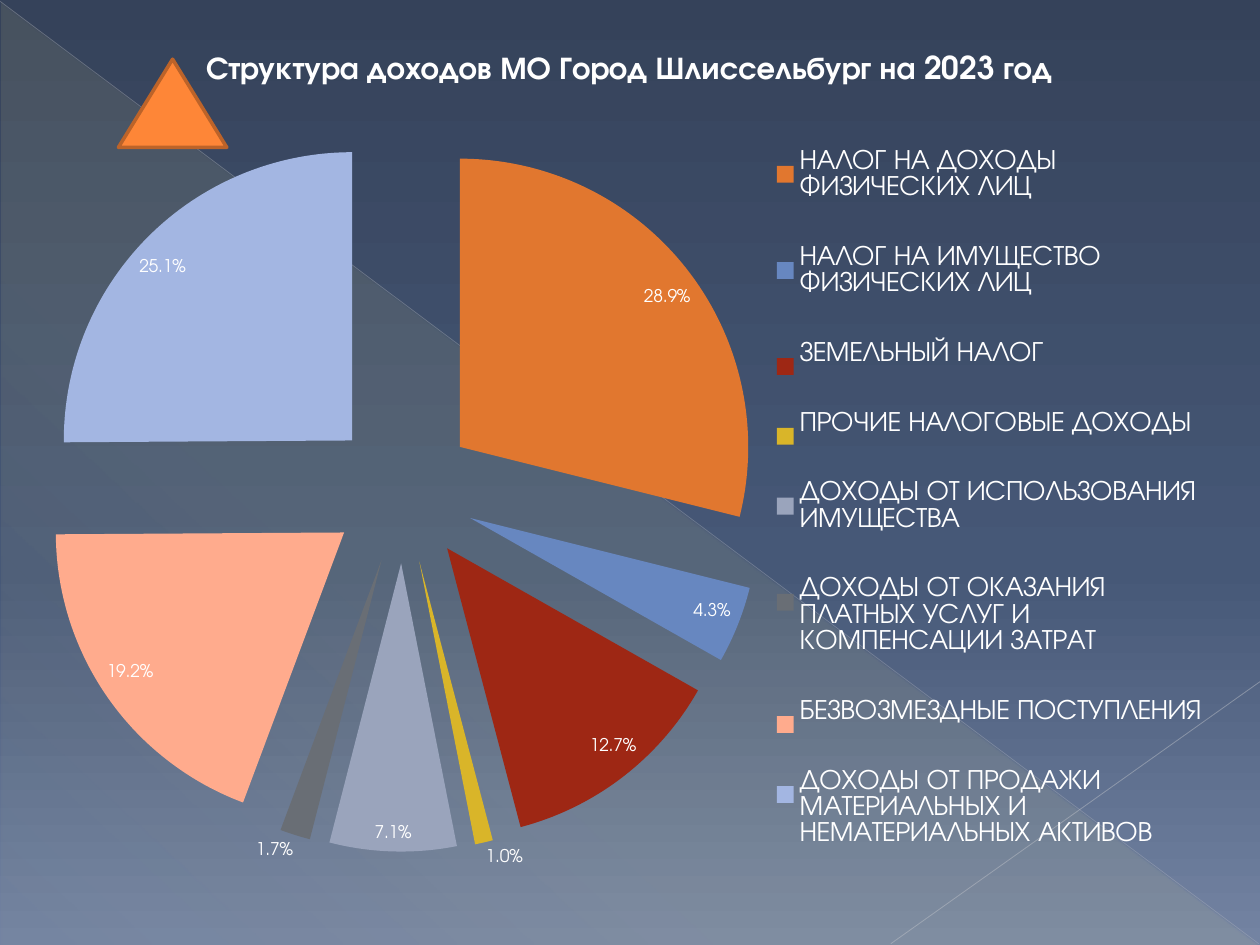
from lxml import etree
from pptx import Presentation
from pptx.chart.data import CategoryChartData
from pptx.dml.color import RGBColor
from pptx.enum.chart import XL_CHART_TYPE as ChartType
from pptx.enum.chart import XL_LABEL_POSITION as LabelPosition
from pptx.enum.chart import XL_LEGEND_POSITION as LegendPosition
from pptx.enum.shapes import MSO_CONNECTOR as Connector
from pptx.enum.shapes import MSO_SHAPE as Shape
from pptx.oxml import parse_xml
from pptx.oxml.ns import nsdecls, qn
from pptx.util import Inches, Pt

FONT = "TeX Gyre Adventor"
TITLE = "Структура доходов МО Город Шлиссельбург на 2023 год"
EXPLOSION = 25
CHART_WIDTH, CHART_HEIGHT = 9.61, 7.01

# Category, share, slice colour
INCOME = [
    ("НАЛОГ НА ДОХОДЫ ФИЗИЧЕСКИХ ЛИЦ", 0.289, "E1772F"),
    ("НАЛОГ НА ИМУЩЕСТВО ФИЗИЧЕСКИХ ЛИЦ", 0.043, "6787C0"),
    ("ЗЕМЕЛЬНЫЙ НАЛОГ", 0.127, "9E2714"),
    ("ПРОЧИЕ НАЛОГОВЫЕ ДОХОДЫ", 0.01, "D9B529"),
    ("ДОХОДЫ ОТ ИСПОЛЬЗОВАНИЯ ИМУЩЕСТВА", 0.071, "9AA4BC"),
    ("ДОХОДЫ ОТ ОКАЗАНИЯ ПЛАТНЫХ УСЛУГ И КОМПЕНСАЦИИ ЗАТРАТ", 0.017, "696E75"),
    ("БЕЗВОЗМЕЗДНЫЕ ПОСТУПЛЕНИЯ", 0.192, "FFAB8D"),
    ("ДОХОДЫ ОТ ПРОДАЖИ МАТЕРИАЛЬНЫХ И НЕМАТЕРИАЛЬНЫХ АКТИВОВ", 0.251, "A3B6E2"),
]


def color(value):
    return RGBColor.from_string(value)


def set_gradient(fill, holder, stops, angle):
    """Replace the solid fill inside holder; stops are (position, colour, opacity)."""
    fill.solid()
    marks = "".join(
        f'<a:gs pos="{position * 1000}"><a:srgbClr val="{value}">'
        f'<a:alpha val="{opacity * 1000}"/></a:srgbClr></a:gs>'
        for position, value, opacity in stops
    )
    gradient = parse_xml(
        f'<a:gradFill {nsdecls("a")} rotWithShape="1"><a:gsLst>{marks}</a:gsLst>'
        f'<a:lin ang="{angle * 60000}" scaled="0"/></a:gradFill>'
    )
    solid = next(holder.iter(qn("a:solidFill")))
    solid.getparent().replace(solid, gradient)


def add_shape(page, kind, left, top, width, height):
    shape = page.shapes.add_shape(
        kind, Inches(left), Inches(top), Inches(width), Inches(height)
    )
    shape.shadow.inherit = False
    return shape


def add_line(page, start, end, value, width, opacity):
    line = page.shapes.add_connector(
        Connector.STRAIGHT, *[Inches(length) for length in (*start, *end)]
    )
    line.line.color.rgb = color(value)
    line.line.width = Pt(width)
    paint = next(line.element.iter(qn("a:srgbClr")))
    etree.SubElement(paint, qn("a:alpha"), val=str(opacity * 1000))
    etree.SubElement(line.element.spPr, qn("a:effectLst"))


def style_font(font, size, bold=False):
    font.name = FONT
    font.size = Pt(size)
    font.bold = bold
    font.color.rgb = color("FFFFFF")


def place(element, index, **inches):
    """Give a chart part a manual layout, in inches from the chart's corner."""
    for old in element.findall(qn("c:layout")):
        element.remove(old)
    layout = etree.Element(qn("c:layout"))
    manual = etree.SubElement(layout, qn("c:manualLayout"))
    if element.tag == qn("c:plotArea"):
        etree.SubElement(manual, qn("c:layoutTarget"), val="inner")
    for axis in "xy":
        etree.SubElement(manual, qn(f"c:{axis}Mode"), val="edge")
    for name, length in inches.items():
        whole = CHART_WIDTH if name in "xw" else CHART_HEIGHT
        etree.SubElement(manual, qn(f"c:{name}"), val=f"{length / whole:.5f}")
    element.insert(index, layout)


def explode(series):
    """Pull every slice away from the centre."""
    for point in series.findall(qn("c:dPt")):
        offset = etree.Element(qn("c:explosion"), val=str(EXPLOSION))
        point.find(qn("c:spPr")).addprevious(offset)
    offset = etree.Element(qn("c:explosion"), val=str(EXPLOSION))
    series.find(qn("c:tx")).addnext(offset)


def add_income_chart(page):
    names, shares, colors = zip(*INCOME)
    data = CategoryChartData(number_format="0.0%")
    data.categories = names
    data.add_series("Series 1", shares)
    chart = page.shapes.add_chart(
        ChartType.PIE, Inches(0.2), Inches(0.21),
        Inches(CHART_WIDTH), Inches(CHART_HEIGHT), data,
    ).chart
    style_font(chart.font, 10)

    # Title and legend
    span = chart.chart_title.text_frame.paragraphs[0].add_run()
    span.text = TITLE
    style_font(span.font, 18, bold=True)
    chart.chart_title.include_in_layout = False
    chart.has_legend = True
    chart.legend.position = LegendPosition.RIGHT
    chart.legend.include_in_layout = False
    style_font(chart.legend.font, 16)

    # Slices and their labels
    plot = chart.plots[0]
    plot.vary_by_categories = True
    for index, value in enumerate(colors):
        slice_format = plot.series[0].points[index].format
        slice_format.fill.solid()
        slice_format.fill.fore_color.rgb = color(value)
        slice_format.line.fill.background()
    labels = plot.series[0].data_labels
    labels.show_value = True
    labels.show_percentage = False
    labels.number_format = "0.0%"
    labels.number_format_is_linked = False
    labels.position = LabelPosition.BEST_FIT
    style_font(labels.font, 10)

    root = chart.element
    explode(next(root.iter(qn("c:ser"))))
    place(next(root.iter(qn("c:title"))), 1, x=1.39, y=0.16)
    place(next(root.iter(qn("c:plotArea"))), 0, x=0.14, y=0.83, w=5.72, h=5.72)
    place(next(root.iter(qn("c:legend"))), 1, x=5.89, y=0.62, w=3.53, h=6.24)


def main():
    deck = Presentation()
    deck.slide_width, deck.slide_height = Inches(10), Inches(7.5)
    page = deck.slides.add_slide(deck.slide_layouts[6])

    # Background with its translucent corner
    set_gradient(
        page.background.fill, page.element,
        [(0, "35425A", 100), (60, "465877", 100), (100, "7383A2", 100)], 90,
    )
    corner = add_shape(page, Shape.RIGHT_TRIANGLE, 0.01, 0.02, 9.98, 7.48)
    corner.line.fill.background()
    set_gradient(
        corner.fill, corner.element.spPr,
        [(0, "FFF39D", 10), (70, "FFF39D", 8), (100, "FFF39D", 1)], 133,
    )
    add_line(page, (0, 0.01), (9.99, 7.49), "BABDC4", 0.39, 35)
    add_line(page, (10, 5.41), (7.07, 7.49), "C1C4CA", 0.47, 45)

    # Orange marker
    marker = add_shape(page, Shape.ISOSCELES_TRIANGLE, 0.94, 0.47, 0.86, 0.7)
    marker.fill.solid()
    marker.fill.fore_color.rgb = color("FE8637")
    marker.line.color.rgb = color("BC6329")
    marker.line.width = Pt(2)

    add_income_chart(page)
    deck.save("out.pptx")


if __name__ == "__main__":
    main()
